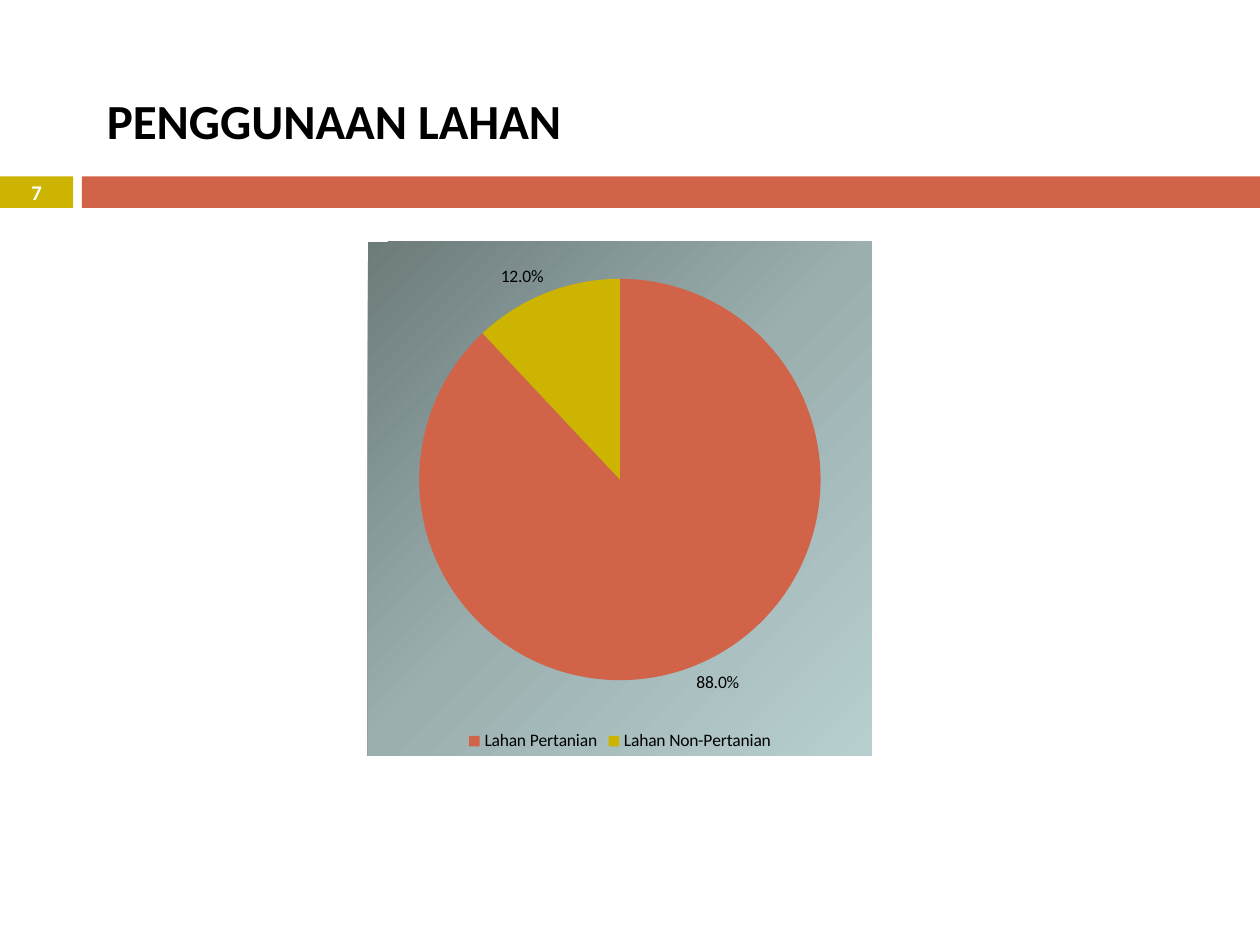
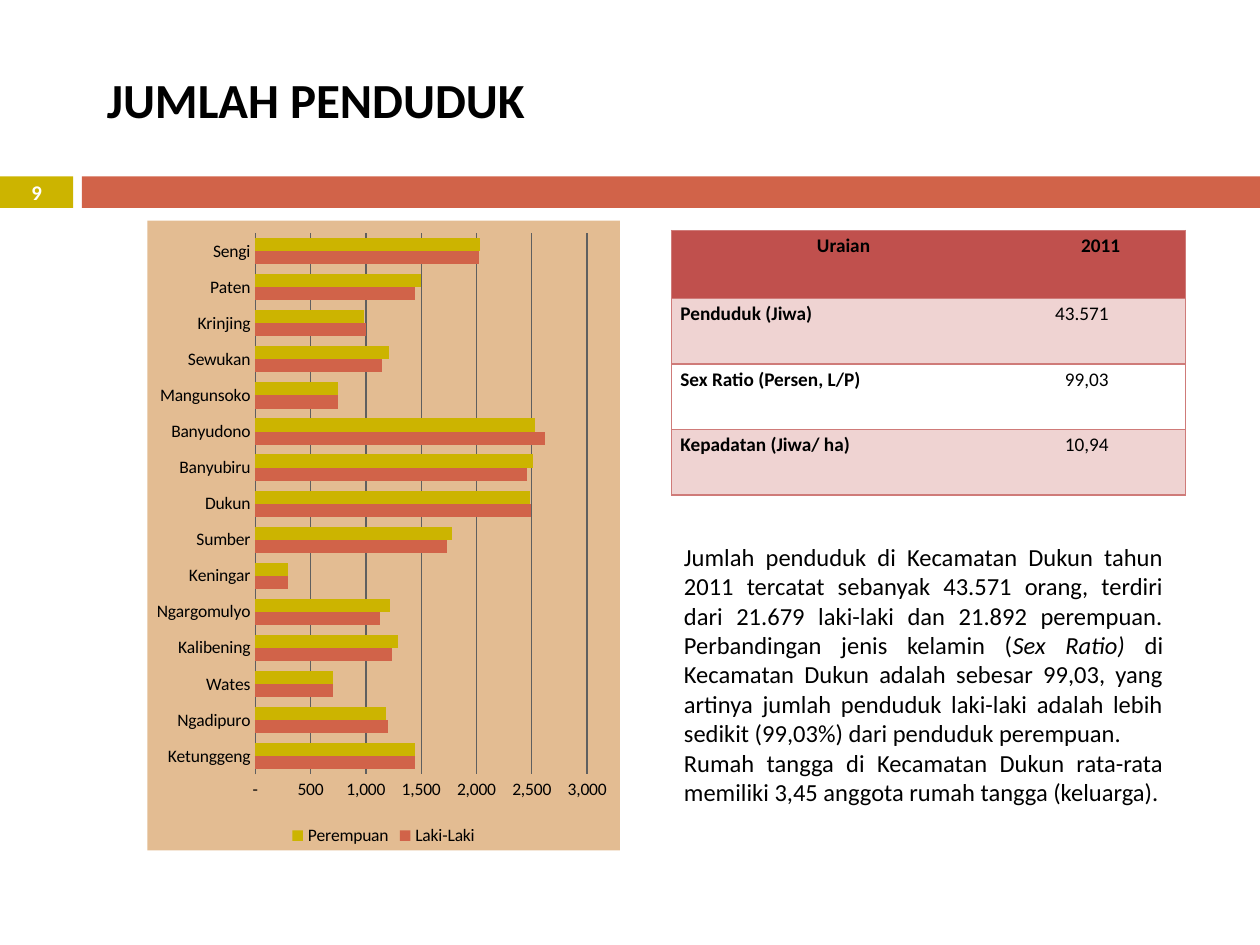
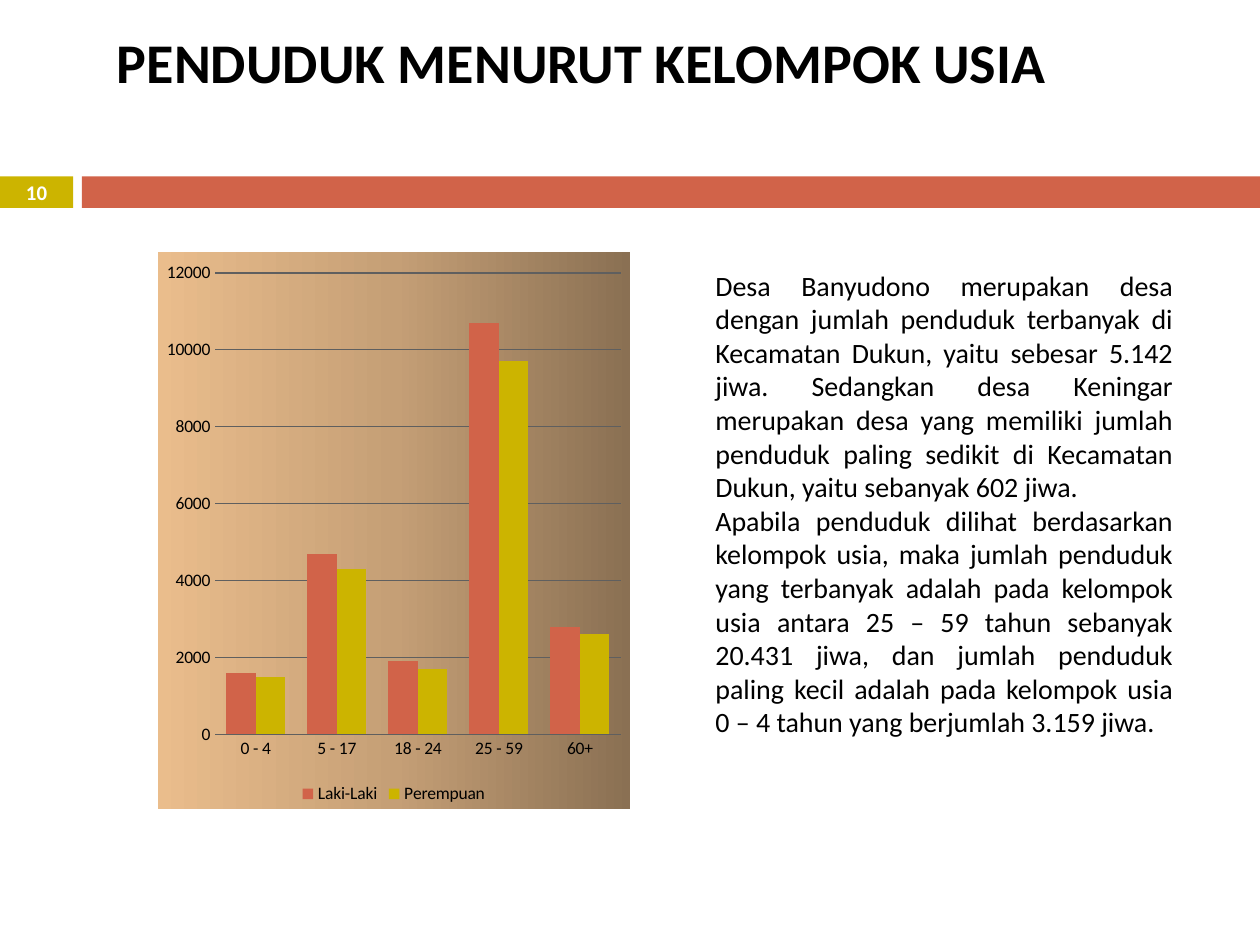
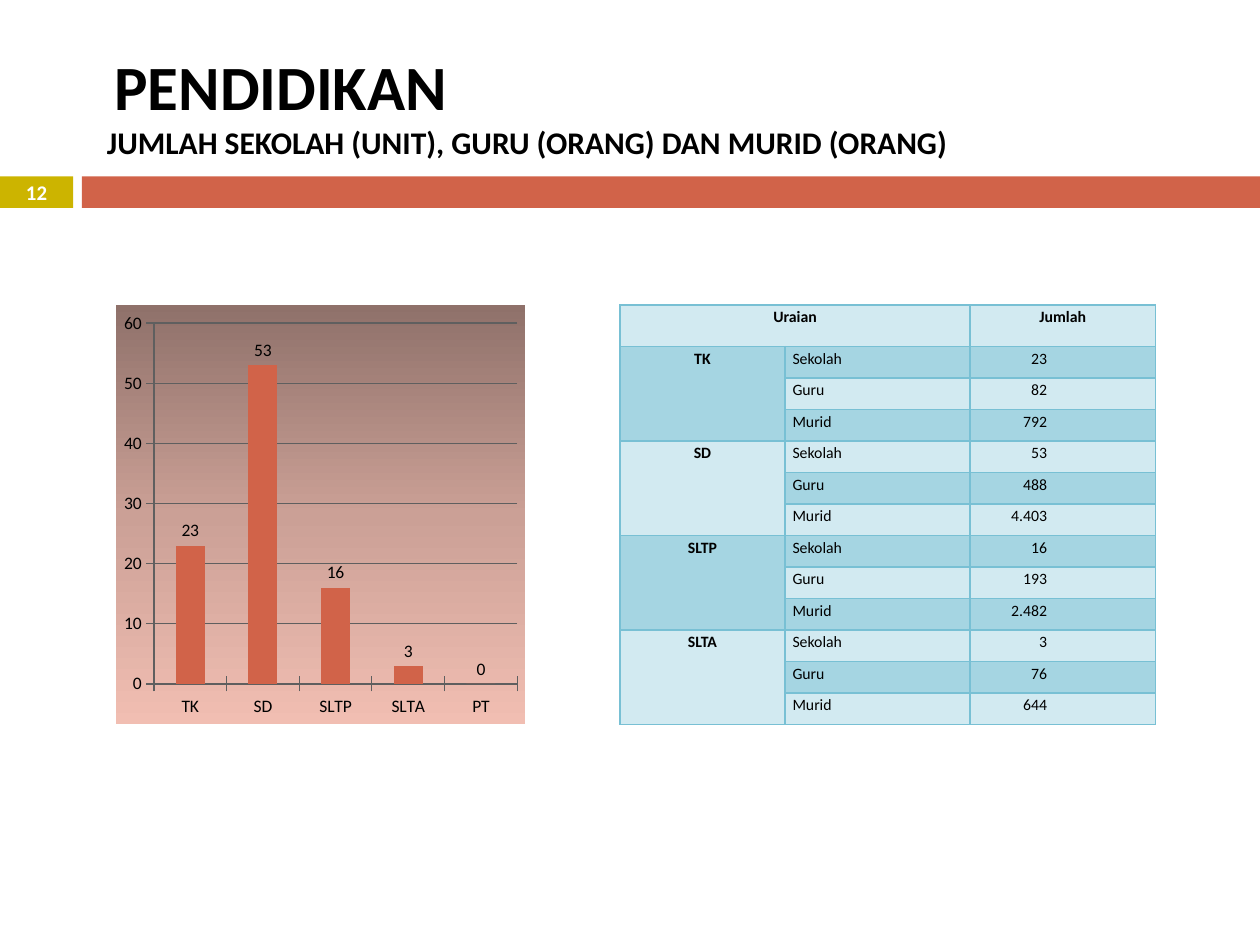
from dataclasses import dataclass
from typing import NamedTuple

from lxml import etree
from pptx import Presentation
from pptx.chart.data import CategoryChartData
from pptx.dml.color import RGBColor
from pptx.enum.chart import XL_CHART_TYPE, XL_LABEL_POSITION, XL_LEGEND_POSITION, XL_TICK_MARK
from pptx.enum.shapes import MSO_SHAPE
from pptx.enum.text import MSO_ANCHOR, MSO_AUTO_SIZE, PP_ALIGN
from pptx.oxml.ns import qn
from pptx.util import Inches, Pt

PIE = XL_CHART_TYPE.PIE
BARS = XL_CHART_TYPE.BAR_CLUSTERED
COLUMNS = XL_CHART_TYPE.COLUMN_CLUSTERED
LEFT, CENTER, RIGHT, JUSTIFY = PP_ALIGN.LEFT, PP_ALIGN.CENTER, PP_ALIGN.RIGHT, PP_ALIGN.JUSTIFY
NO_TICK, CROSS_TICK = XL_TICK_MARK.NONE, XL_TICK_MARK.CROSS
OUTSIDE_END = XL_LABEL_POSITION.OUTSIDE_END
LEGEND_BOTTOM = XL_LEGEND_POSITION.BOTTOM
MIDDLE = MSO_ANCHOR.MIDDLE
GROW, FIXED = MSO_AUTO_SIZE.SHAPE_TO_FIT_TEXT, MSO_AUTO_SIZE.NONE
RECTANGLE = MSO_SHAPE.RECTANGLE

FONT = "Calibri"
PLAIN_TABLE_STYLE = "{2D5ABB26-0587-4C30-8999-92F81FD0307C}"
COLORS = {
    "text": "000000", "white": "FFFFFF", "red": "D16349", "yellow": "CCB400",
    "grid": "5F5F5F", "sand": "E3BC92",
    "people_head": "C0504D", "people_band": "EFD3D2", "people_border": "CF7B79",
    "school_light": "D2EAF1", "school_dark": "A5D5E2", "school_border": "78C0D4",
}


class Box(NamedTuple):
    left: float
    top: float
    width: float
    height: float

    def lengths(self) -> list:
        return [Inches(value) for value in self]


class Series(NamedTuple):
    name: str
    values: list
    color: str


@dataclass
class ChartSpec:
    kind: int
    box: Box
    categories: list
    series: list
    background: list  # one colour, or the three stops of a gradient
    angle: int = 0
    legend: bool = True
    gap: int = 75
    value_format: str = "General"
    label_format: str = ""
    axis_ticks: bool = False


@dataclass
class CellStyle:
    size: float
    margin: float
    border: str


PAGE_BOX = Box(0, 1.39, 0.58, 0.27)
BANDS = [(Box(0, 1.4, 0.58, 0.25), "yellow"), (Box(0.65, 1.4, 9.35, 0.25), "red")]


def rgb(name: str) -> RGBColor:
    return RGBColor.from_string(COLORS[name])


def set_font(font, size: float, color: str = "text", bold: bool = False) -> None:
    font.name, font.size, font.bold = FONT, Pt(size), bold
    font.color.rgb = rgb(color)


# Text
def add_text(slide, box: Box, paragraphs: list, size: float, bold: bool = False,
             align=LEFT, color: str = "text", wrap: bool = True):
    """Write paragraphs; words between asterisks are italic."""
    frame = slide.shapes.add_textbox(*box.lengths()).text_frame
    frame.word_wrap = wrap
    frame.auto_size = GROW
    for index, content in enumerate(paragraphs):
        paragraph = frame.paragraphs[0] if index == 0 else frame.add_paragraph()
        paragraph.alignment = align
        set_font(paragraph.font, size, color, bold)
        for position, words in enumerate(content.split("*")):
            run = paragraph.add_run()
            run.text = words
            if position % 2:
                run.font.italic = True
    return frame


def add_page(deck, number: int):
    """Start a slide with its bands and slide number."""
    slide = deck.slides.add_slide(deck.slide_layouts[6])
    for box, color in BANDS:
        band = slide.shapes.add_shape(RECTANGLE, *box.lengths())
        band.shadow.inherit = False
        band.fill.solid()
        band.fill.fore_color.rgb = rgb(color)
        band.line.fill.background()
    page = add_text(slide, PAGE_BOX, [str(number)], 11.9, True, CENTER, "white")
    page.auto_size = FIXED
    page.vertical_anchor = MIDDLE
    return slide


# Charts
def area_properties(stops: list, angle: int):
    properties = etree.Element(qn("c:spPr"))
    if len(stops) == 1:
        solid = etree.SubElement(properties, qn("a:solidFill"))
        etree.SubElement(solid, qn("a:srgbClr"), val=stops[0])
    else:
        gradient = etree.SubElement(properties, qn("a:gradFill"), rotWithShape="1")
        stop_list = etree.SubElement(gradient, qn("a:gsLst"))
        for index, color in enumerate(stops):
            stop = etree.SubElement(stop_list, qn("a:gs"), pos=str(index * 50000))
            etree.SubElement(stop, qn("a:srgbClr"), val=color)
        etree.SubElement(gradient, qn("a:lin"), ang=str(angle * 60000), scaled="0")
    line = etree.SubElement(properties, qn("a:ln"))
    etree.SubElement(line, qn("a:noFill"))
    return properties


def style_line(line) -> None:
    line.color.rgb = rgb("grid")
    line.width = Pt(0.75)


def style_axes(chart, spec_ticks: bool, value_format: str) -> None:
    ticks = CROSS_TICK if spec_ticks else NO_TICK
    for axis in (chart.category_axis, chart.value_axis):
        axis.major_tick_mark = ticks
        axis.minor_tick_mark = NO_TICK
        style_line(axis.format.line)
    chart.category_axis.has_major_gridlines = False
    values = chart.value_axis
    values.has_major_gridlines = True
    style_line(values.major_gridlines.format.line)
    values.tick_labels.number_format = value_format
    values.tick_labels.number_format_is_linked = False
    if not spec_ticks:
        values.format.line.fill.background()


def add_chart(slide, design: ChartSpec) -> None:
    data = CategoryChartData()
    data.categories = design.categories
    for series in design.series:
        data.add_series(series.name, series.values)
    chart = slide.shapes.add_chart(design.kind, *design.box.lengths(), data).chart
    set_font(chart.font, 10)
    chart.has_title = False
    chart.has_legend = design.legend
    if design.legend:
        chart.legend.position = LEGEND_BOTTOM
        chart.legend.include_in_layout = False
    plot = chart.plots[0]
    plot.vary_by_categories = design.kind == PIE
    if design.kind != PIE:
        plot.gap_width = design.gap
        style_axes(chart, design.axis_ticks, design.value_format)
    for series, source in zip(plot.series, design.series):
        if design.kind == PIE:
            painted = [series.points[i] for i in range(len(design.categories))]
            colors = ["red", "yellow"]
        else:
            series.invert_if_negative = False
            painted, colors = [series], [source.color]
        for item, color in zip(painted, colors):
            item.format.fill.solid()
            item.format.fill.fore_color.rgb = rgb(color)
        if design.label_format:
            labels = series.data_labels
            labels.show_value = True
            labels.number_format = design.label_format
            labels.number_format_is_linked = False
            labels.position = OUTSIDE_END
    # Background of the chart, and of the plot when it is one colour
    root = chart._chartSpace.find(qn("c:chart"))
    root.addnext(area_properties(design.background, design.angle))
    if len(design.background) == 1:
        root.find(qn("c:plotArea")).append(area_properties(design.background, 0))


# Tables
def add_table(slide, box: Box, widths: list, heights: list):
    frame = slide.shapes.add_table(len(heights), len(widths), *box.lengths())
    table = frame.table
    table.first_row = table.horz_banding = False
    next(frame._element.iter(qn("a:tableStyleId"))).text = PLAIN_TABLE_STYLE
    for column, width in zip(table.columns, widths):
        column.width = Inches(width)
    for row, height in zip(table.rows, heights):
        row.height = Inches(height)
    return table


def style_cell(cell, style: CellStyle, sides: str, fill: str) -> None:
    properties = cell._tc.get_or_add_tcPr()
    for side in sides:
        line = etree.SubElement(properties, qn(f"a:ln{side}"), w=str(Pt(1)))
        solid = etree.SubElement(line, qn("a:solidFill"))
        etree.SubElement(solid, qn("a:srgbClr"), val=COLORS[style.border])
    if fill:
        cell.fill.solid()
        cell.fill.fore_color.rgb = rgb(fill)
    else:
        cell.fill.background()
    cell.margin_left = cell.margin_right = Inches(style.margin)
    cell.margin_top = cell.margin_bottom = 0


def write_cell(cell, text: str, style: CellStyle, align=LEFT, bold: bool = False,
               right_margin: float = 0) -> None:
    cell.text = text
    paragraph = cell.text_frame.paragraphs[0]
    paragraph.alignment = align
    paragraph.line_spacing = 1.15
    set_font(paragraph.font, style.size, bold=bold)
    if right_margin:
        cell.margin_right = Inches(right_margin)


def add_people_table(slide) -> None:
    style = CellStyle(11, 0.07, "people_border")
    rows = [("Uraian", "2011"), ("Penduduk (Jiwa)", "43.571"),
            ("Sex Ratio (Persen, L/P)", "99,03"), ("Kepadatan (Jiwa/ ha)", "10,94")]
    fills = ["people_head", "people_band", "", "people_band"]
    table = add_table(slide, Box(5.33, 1.83, 4.08, 2.08), [2.73, 1.35], [0.54] + [0.52] * 3)
    for r, ((label, value), fill) in enumerate(zip(rows, fills)):
        style_cell(table.cell(r, 0), style, "LTB", fill)
        style_cell(table.cell(r, 1), style, "RTB", fill)
        head = r == 0
        write_cell(table.cell(r, 0), label, style, CENTER if head else LEFT, True)
        write_cell(table.cell(r, 1), value, style, CENTER if head else RIGHT, head,
                   0 if head else 0.61)


def add_school_table(slide) -> None:
    style = CellStyle(9, 0.06, "school_border")
    levels = {"TK": ["23", "82", "792"], "SD": ["53", "488", "4.403"],
              "SLTP": ["16", "193", "2.482"], "SLTA": ["3", "76", "644"]}
    measures = ["Sekolah", "Guru", "Murid"]
    table = add_table(slide, Box(4.92, 2.42, 4.25, 3.33), [1.31, 1.47, 1.47],
                      [0.33] + [0.25] * 12)
    for r in range(13):
        for c in range(3):
            style_cell(table.cell(r, c), style, "LRTB",
                       "school_dark" if r % 2 else "school_light")
    table.cell(0, 0).merge(table.cell(0, 1))
    write_cell(table.cell(0, 0), "Uraian", style, CENTER, True)
    write_cell(table.cell(0, 2), "Jumlah", style, CENTER, True)
    for group, (level, counts) in enumerate(levels.items()):
        first = 1 + group * len(measures)
        table.cell(first, 0).merge(table.cell(first + len(measures) - 1, 0))
        write_cell(table.cell(first, 0), level, style, CENTER, True)
        for r, (measure, count) in enumerate(zip(measures, counts), first):
            write_cell(table.cell(r, 1), measure, style)
            write_cell(table.cell(r, 2), count, style, RIGHT, right_margin=0.86)


# Slides
def add_land_use(deck) -> None:
    slide = add_page(deck, 7)
    add_text(slide, Box(0.75, 0.67, 7.92, 0.57), ["PENGGUNAAN LAHAN"], 28, True)
    add_chart(slide, ChartSpec(
        PIE, Box(2.92, 1.92, 4, 4.08), ["Lahan Pertanian", "Lahan Non-Pertanian"],
        [Series("Series 1", [0.88, 0.12], "red")],
        ["6D7B7B", "9BAFAF", "B8CFD0"], angle=45, label_format="0.0%"))


def add_population(deck) -> None:
    slide = add_page(deck, 9)
    add_text(slide, Box(0.75, 0.5, 3.63, 0.57), ["JUMLAH PENDUDUK"], 28, True, wrap=False)
    villages = ["Ketunggeng", "Ngadipuro", "Wates", "Kalibening", "Ngargomulyo",
                "Keningar", "Sumber", "Dukun", "Banyubiru", "Banyudono",
                "Mangunsoko", "Sewukan", "Krinjing", "Paten", "Sengi"]
    men = [1440, 1200, 700, 1240, 1130, 300, 1730, 2490, 2460, 2620, 750, 1150,
           1000, 1440, 2020]
    women = [1440, 1180, 700, 1290, 1220, 300, 1780, 2480, 2510, 2530, 750, 1210,
             980, 1500, 2030]
    add_chart(slide, ChartSpec(
        BARS, Box(1.17, 1.75, 3.75, 5), villages,
        [Series("Laki-Laki", men, "red"), Series("Perempuan", women, "yellow")],
        [COLORS["sand"]],
        value_format='_(* #,##0_);_(* \\(#,##0\\);_(* "-"_);_(@_)'))
    add_text(slide, Box(5.33, 4.25, 4, 2.22), [
        "Jumlah penduduk di Kecamatan Dukun tahun 2011 tercatat sebanyak 43.571 orang, "
        "terdiri dari 21.679 laki-laki dan 21.892 perempuan. Perbandingan jenis kelamin "
        "(*Sex Ratio)* di Kecamatan Dukun adalah sebesar 99,03, yang artinya jumlah "
        "penduduk laki-laki adalah lebih sedikit (99,03%) dari penduduk perempuan.",
        "Rumah tangga di Kecamatan Dukun rata-rata memiliki 3,45 anggota rumah tangga "
        "(keluarga).",
    ], 14, align=JUSTIFY)
    add_people_table(slide)


def add_age_groups(deck) -> None:
    slide = add_page(deck, 10)
    add_chart(slide, ChartSpec(
        COLUMNS, Box(1.25, 2, 3.75, 4.42), ["0 - 4", "5 - 17", "18 - 24", "25 - 59", "60+"],
        [Series("Laki-Laki", [1600, 4700, 1900, 10700, 2800], "red"),
         Series("Perempuan", [1500, 4300, 1700, 9700, 2600], "yellow")],
        ["8A7053", "C59F76", "EABD8C"], angle=180))
    add_text(slide, Box(5.58, 2.08, 3.83, 4.14), [
        "Desa Banyudono merupakan desa dengan jumlah penduduk terbanyak di Kecamatan "
        "Dukun, yaitu sebesar 5.142 jiwa. Sedangkan desa Keningar merupakan desa yang "
        "memiliki jumlah penduduk paling sedikit di Kecamatan Dukun, yaitu sebanyak "
        "602 jiwa.",
        "Apabila penduduk dilihat berdasarkan kelompok usia, maka jumlah penduduk yang "
        "terbanyak adalah pada kelompok usia antara 25 – 59 tahun sebanyak 20.431 jiwa, "
        "dan jumlah penduduk paling kecil adalah pada kelompok usia 0 – 4 tahun yang "
        "berjumlah 3.159 jiwa.",
    ], 16, align=JUSTIFY)
    add_text(slide, Box(0.83, 0.17, 8.08, 0.64), ["PENDUDUK MENURUT KELOMPOK USIA"], 32, True)


def add_education(deck) -> None:
    slide = add_page(deck, 12)
    add_chart(slide, ChartSpec(
        COLUMNS, Box(0.92, 2.42, 3.25, 3.33), ["TK", "SD", "SLTP", "SLTA", "PT"],
        [Series("Series 1", [23, 53, 16, 3, 0], "red")],
        ["8F716A", "CBA096", "F1BEB2"], angle=90, legend=False, gap=150,
        label_format="General", axis_ticks=True))
    add_school_table(slide)
    heading = add_text(slide, Box(0.75, 0.33, 8.25, 1.01), [
        "PENDIDIKAN", "JUMLAH SEKOLAH (UNIT), GURU (ORANG) DAN MURID (ORANG)"], 18, True)
    topic = heading.paragraphs[0]
    topic.font.size = Pt(36)
    topic._p.get_or_add_pPr().set("marL", str(Inches(0.06)))


def main() -> None:
    deck = Presentation()
    deck.slide_width, deck.slide_height = Inches(10), Inches(7.5)
    for add_slide in (add_land_use, add_population, add_age_groups, add_education):
        add_slide(deck)
    deck.save("out.pptx")


if __name__ == "__main__":
    main()
